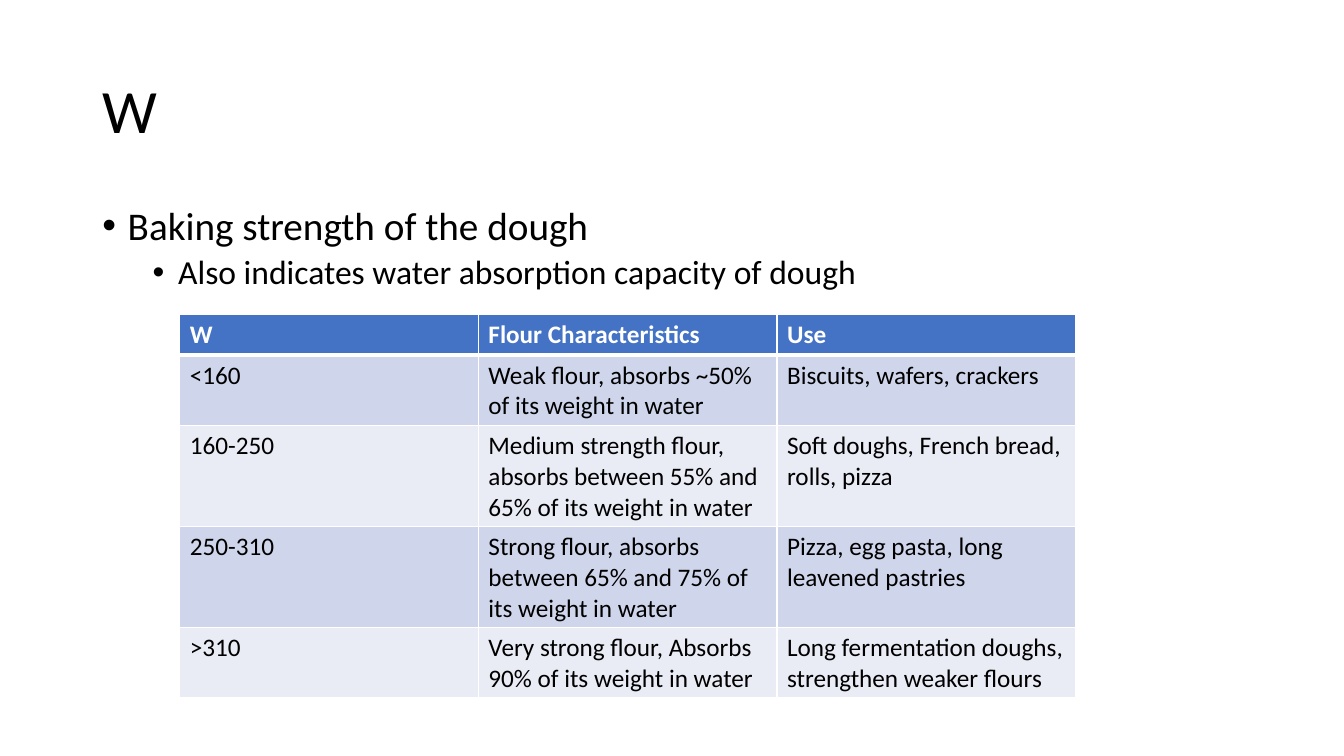
from pptx import Presentation
from pptx.dml.color import RGBColor
from pptx.enum.text import MSO_ANCHOR as Anchor
from pptx.oxml.ns import qn
from pptx.util import Cm, Pt
from lxml.etree import SubElement

BLACK = RGBColor(0x00, 0x00, 0x00)
WHITE = RGBColor(0xFF, 0xFF, 0xFF)
HEADER_BLUE = RGBColor(0x44, 0x72, 0xC4)
BANDS = (RGBColor(0xCF, 0xD5, 0xEA), RGBColor(0xE9, 0xEB, 0xF5))
FONT = "Calibri"

# Text, size, left indent in cm, space before
STRENGTH_POINTS = [
    ("Baking strength of the dough", 28, 0.64, 10),
    ("Also indicates water absorption capacity of dough", 24, 1.91, 5),
]
FLOUR_ROWS = [
    ("W", "Flour Characteristics", "Use"),
    ("<160", "Weak flour, absorbs ~50% of its weight in water",
     "Biscuits, wafers, crackers"),
    ("160-250", "Medium strength flour, absorbs between 55% and 65% of its weight in water",
     "Soft doughs, French bread, rolls, pizza"),
    ("250-310", "Strong flour, absorbs between 65% and 75% of its weight in water",
     "Pizza, egg pasta, long leavened pastries"),
    (">310", "Very strong flour, Absorbs 90% of its weight in water",
     "Long fermentation doughs, strengthen weaker flours"),
]


def add_run(paragraph, text, size, color=BLACK, bold=False):
    run = paragraph.add_run()
    run.text = text
    run.font.name = FONT
    run.font.size = Pt(size)
    run.font.bold = bold
    run.font.color.rgb = color


def add_text_frame(slide, box, anchor):
    frame = slide.shapes.add_textbox(*box).text_frame
    frame.word_wrap = True
    frame.vertical_anchor = anchor
    return frame


def add_title(slide, box, title):
    paragraph = add_text_frame(slide, box, Anchor.MIDDLE).paragraphs[0]
    paragraph.line_spacing = 0.9
    add_run(paragraph, title, 44)


def add_bullets(slide, box, points):
    frame = add_text_frame(slide, box, Anchor.TOP)
    for level, (text, size, indent, space) in enumerate(points):
        paragraph = frame.add_paragraph() if level else frame.paragraphs[0]
        paragraph.level = level
        paragraph.line_spacing = 0.9
        paragraph.space_before = Pt(space)
        add_run(paragraph, text, size)
        # Hanging bullet
        properties = paragraph._p.get_or_add_pPr()
        properties.set("marL", str(Cm(indent)))
        properties.set("indent", str(-Cm(0.64)))
        SubElement(properties, qn("a:buFont"), typeface="Arial")
        SubElement(properties, qn("a:buChar"), char="•")


def add_borders(cell, top, bottom):
    properties = cell._tc.get_or_add_tcPr()
    for side, width in (("L", 1), ("R", 1), ("T", top), ("B", bottom)):
        line = SubElement(properties, qn(f"a:ln{side}"), w=str(Pt(width)))
        fill = SubElement(line, qn("a:solidFill"))
        SubElement(fill, qn("a:srgbClr"), val=str(WHITE))


def add_flour_table(slide, box, rows):
    left, top, width, row_height = box
    columns = len(rows[0])
    table = slide.shapes.add_table(
        len(rows), columns, left, top, width, row_height * len(rows)).table
    for column in table.columns:
        column.width = width // columns
    for r, texts in enumerate(rows):
        header = r == 0
        table.rows[r].height = row_height
        for c, text in enumerate(texts):
            cell = table.cell(r, c)
            # A thick rule separates the header from the body
            add_borders(cell, 3 if r == 1 else 1, 3 if header else 1)
            cell.fill.solid()
            cell.fill.fore_color.rgb = HEADER_BLUE if header else BANDS[(r - 1) % 2]
            add_run(cell.text_frame.paragraphs[0], text, 18,
                    WHITE if header else BLACK, header)


def main():
    deck = Presentation()
    deck.slide_width, deck.slide_height = Cm(33.87), Cm(19.05)
    slide = deck.slides.add_slide(deck.slide_layouts[6])
    add_title(slide, (Cm(2.33), Cm(1.01), Cm(29.21), Cm(3.68)), "W")
    add_bullets(slide, (Cm(2.33), Cm(5.07), Cm(29.21), Cm(12.09)), STRENGTH_POINTS)
    add_flour_table(slide, (Cm(4.53), Cm(7.92), Cm(22.58), Cm(1.03)), FLOUR_ROWS)
    deck.save("out.pptx")


if __name__ == "__main__":
    main()
